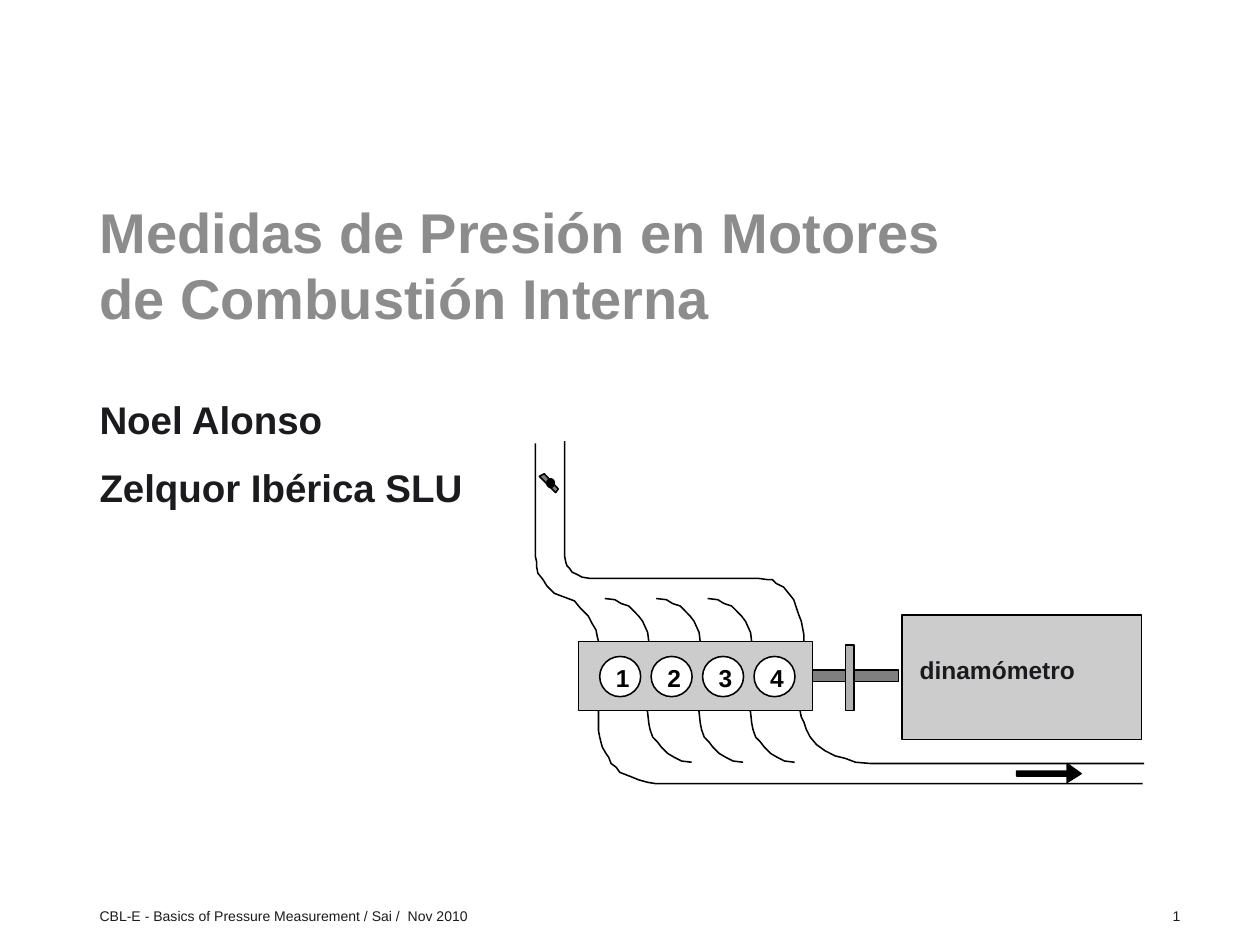
from pptx import Presentation
from pptx.dml.color import RGBColor
from pptx.enum.shapes import MSO_SHAPE
from pptx.enum.text import MSO_ANCHOR, PP_ALIGN
from pptx.util import Pt

FONT = "Arial"
INK, BLACK, STEEL, GREY = "1B1B1F", "000000", "7F7F7F", "CCCCCC"
LINE_WIDTH = 0.88
CYLINDER_PITCH = 29.4

# Outlines in points, measured from the top left of the engine diagram
INTAKE_INNER = [(0, 1.4), (0, 66.2), (0.7, 69.1), (0.7, 72), (1.4, 75.6), (4.3, 79.2),
                (6.5, 82.8), (10.8, 87.1), (16.6, 89.3), (22.3, 91.4), (25.9, 95.8),
                (30.2, 100.1), (32.4, 104.4), (34.6, 108), (35.3, 111.6), (36, 114.5)]
INTAKE_OUTER = [(151.2, 114.5), (151.9, 118.8), (153.4, 116.6), (153.4, 110.9),
                (151.9, 103), (150.5, 99.4), (149, 95), (147.6, 90.7), (144.7, 87.1),
                (141.8, 83.5), (137.5, 81.4), (135.4, 79.2), (132.5, 79.2), (127.4, 78.5),
                (31, 78.5), (26.6, 77.8), (23.8, 76.3), (20.9, 74.9), (19.4, 72.7),
                (18, 71.3), (17.3, 69.1), (16.6, 65.5), (16.6, 0)]
INTAKE_RUNNER = [(62.6, 114.5), (64.8, 119.5), (64.8, 115.2), (64.1, 109.4), (61.2, 103),
                 (59, 100.1), (56.2, 97.2), (53.3, 94.3), (49, 92.9), (45.4, 90.7),
                 (39.6, 90)]
EXHAUST_INNER = [(347.8, 184.3), (191.5, 184.3), (182.9, 183.6), (177.1, 181.4),
                 (171.4, 180), (165.6, 177.1), (160.6, 173.5), (157, 169.2),
                 (154.8, 164.9), (153.4, 160.6), (151.9, 157.7), (151.2, 154.1)]
EXHAUST_OUTER = [(36, 147.6), (36, 165.6), (36.7, 169.2), (37.4, 172.1), (38.2, 175),
                 (40.3, 178.6), (41.8, 180.7), (43.2, 184.3), (46.1, 186.5),
                 (48.2, 189.4), (51.8, 190.8), (55.4, 192.2), (59, 193.7),
                 (64.1, 195.1), (68.4, 195.8), (347, 195.8)]
EXHAUST_RUNNER = [(64.8, 154.1), (64.1, 150.5), (62.6, 151.2), (64.1, 154.8),
                  (64.8, 161.3), (65.5, 164.9), (67, 169.2), (69.8, 172.1), (72, 175),
                  (75.6, 178.6), (79.2, 180.7), (83.5, 182.9), (89.3, 183.6)]
THROTTLE_FLAP = [(5, 18.7), (13, 27.4), (11.5, 29.5), (2.2, 20.2)]
FLOW_ARROW = [(303.8, 195.1), (311.8, 190.1), (303.8, 184.3), (303.8, 188.6),
              (275, 188.6), (275, 191.5), (303.8, 191.5)]


def colour(hex_text):
    return RGBColor.from_string(hex_text)


def paint(shape, fill):
    """Give a shape its fill (or none) and the thin black outline."""
    shape.shadow.inherit = False
    if fill:
        shape.fill.solid()
        shape.fill.fore_color.rgb = colour(fill)
    else:
        shape.fill.background()
    shape.line.color.rgb = colour(BLACK)
    shape.line.width = Pt(LINE_WIDTH)


def add_preset(slide, kind, box, fill):
    paint(slide.shapes.add_shape(kind, *[Pt(v) for v in box]), fill)


def add_outline(slide, origin, points, fill=None):
    left, top = origin
    places = [(Pt(left + x), Pt(top + y)) for x, y in points]
    builder = slide.shapes.build_freeform(*places[0])
    builder.add_line_segments(places[1:], close=fill is not None)
    paint(builder.convert_to_shape(), fill)


def write(holder, lines, size, text_colour, bold=False, align=PP_ALIGN.LEFT,
          wrap=True, margins=(0, 0), line_spacing=None, gap=0):
    frame = holder.text_frame
    frame.word_wrap = wrap
    frame.vertical_anchor = MSO_ANCHOR.TOP
    frame.margin_left = frame.margin_right = Pt(margins[0])
    frame.margin_top = frame.margin_bottom = Pt(margins[1])
    for index, line in enumerate(lines):
        paragraph = frame.add_paragraph() if index else frame.paragraphs[0]
        paragraph.alignment = align
        paragraph.space_before = Pt(gap if index else 0)
        if line_spacing:
            paragraph.line_spacing = Pt(line_spacing)
        run = paragraph.add_run()
        run.text = line
        run.font.name = FONT
        run.font.size = Pt(size)
        run.font.bold = bold
        run.font.color.rgb = colour(text_colour)


def add_text(slide, box, lines, size, text_colour=INK, **style):
    holder = slide.shapes.add_textbox(*[Pt(v) for v in box])
    write(holder, lines, size, text_colour, **style)


def add_heading(slide, left, top, width):
    title = slide.shapes.title
    title.left, title.top, title.width, title.height = Pt(left), Pt(top), Pt(width), Pt(90.7)
    write(title, ["Medidas de Presión en Motores de Combustión Interna"], 32, "8C8C8C",
          bold=True, line_spacing=38)
    add_text(slide, (left, top + 113.8, 343.4, 141.8),
             ["Noel Alonso", "Zelquor Ibérica SLU"], 22,
             bold=True, line_spacing=26, gap=13)


def add_footer(slide, left, top, width):
    add_text(slide, (left, top, 453.6, 14.4),
             ["CBL-E - Basics of Pressure Measurement / Sai /  Nov 2010"], 8)
    add_text(slide, (left + width - 56.9, top, 56.9, 14.4), ["1"], 8, align=PP_ALIGN.RIGHT)


def add_engine_diagram(slide, left, top):
    origin = (left, top)

    def place(x, y, width, height):
        return left + x, top + y, width, height

    # Dynamometer, drive shaft and flange
    add_preset(slide, MSO_SHAPE.RECTANGLE, place(209.5, 99.4, 136.8, 71.3), GREY)
    add_preset(slide, MSO_SHAPE.RECTANGLE, place(157.7, 131, 49.7, 6.5), STEEL)
    add_preset(slide, MSO_SHAPE.RECTANGLE, place(177.1, 116.6, 5, 37.4), "B3B3B3")
    add_text(slide, place(212.4, 118.8, 133.2, 24.5), ["dinamómetro"], 14,
             bold=True, margins=(7.2, 3.6))

    # Intake and exhaust pipes, with a runner between neighbouring cylinders
    for pipe in (INTAKE_INNER, INTAKE_OUTER, EXHAUST_INNER, EXHAUST_OUTER):
        add_outline(slide, origin, pipe)
    for gap_index in range(3):
        runner_origin = (left + gap_index * CYLINDER_PITCH, top)
        for runner in (INTAKE_RUNNER, EXHAUST_RUNNER):
            add_outline(slide, runner_origin, runner)

    # Engine block and numbered cylinders
    add_preset(slide, MSO_SHAPE.RECTANGLE, place(24.5, 114.5, 133.9, 39.6), GREY)
    for index in range(4):
        x = 36.7 + index * CYLINDER_PITCH
        add_preset(slide, MSO_SHAPE.OVAL, place(x, 123.1, 23.4, 23), "FFFFFF")
        add_text(slide, place(x + 9.2, 126.7, 7.9, 16.6), [str(index + 1)], 14, BLACK,
                 bold=True, wrap=False)

    # Throttle flap with its pivot, and exhaust flow arrow
    add_outline(slide, origin, THROTTLE_FLAP, STEEL)
    add_preset(slide, MSO_SHAPE.OVAL, place(6.5, 21.6, 4.3, 5), BLACK)
    add_outline(slide, origin, FLOW_ARROW, BLACK)


def main():
    presentation = Presentation()
    presentation.slide_width, presentation.slide_height = Pt(720), Pt(540)
    slide = presentation.slides.add_slide(presentation.slide_layouts[5])
    add_footer(slide, 56.9, 518.4, 617.7)
    add_heading(slide, 56.9, 113, 507.6)
    add_engine_diagram(slide, 306, 252)
    presentation.save("out.pptx")


if __name__ == "__main__":
    main()
